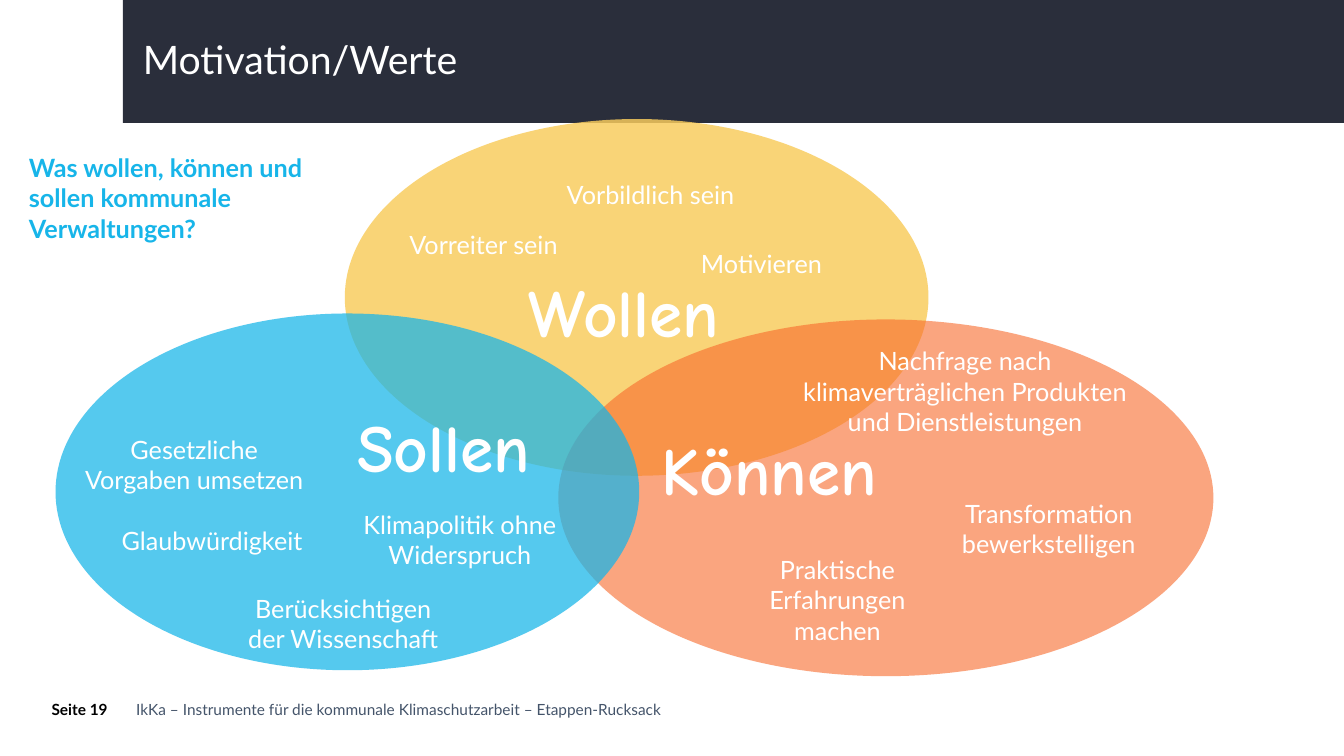
"""Build the slide on what municipal administrations want, can and should do."""
from lxml.etree import SubElement as add_element
from pptx import Presentation
from pptx.dml.color import RGBColor
from pptx.enum.shapes import MSO_SHAPE as Preset
from pptx.enum.text import MSO_ANCHOR as Anchor, PP_ALIGN as Align
from pptx.oxml.ns import qn
from pptx.util import Cm, Pt

COLOURS = {
    "navy": "2A2E3B",
    "yellow": "F9CC5D",
    "orange": "F8692B",
    "blue": "17B5E9",
    "slate": "44546A",
    "white": "FFFFFF",
    "black": "000000",
}


def write_text(box, text, size=18, font="Lato", colour="white", bold=False,
               align=Align.LEFT, inset=(0, 0)):
    """Fill a box with one formatted paragraph."""
    frame = box.text_frame
    frame.word_wrap = True
    frame.vertical_anchor = Anchor.TOP
    frame.margin_left = frame.margin_right = Cm(inset[0])
    frame.margin_top = frame.margin_bottom = Cm(inset[1])
    para = frame.paragraphs[0]
    para.text = text
    para.alignment = align
    for span in para.runs:
        span.font.size = Pt(size)
        span.font.name = font
        span.font.bold = bold
        span.font.color.rgb = RGBColor.from_string(COLOURS[colour])
    return para


def add_filled(preset, place, colour, opacity=100):
    """Add a borderless shape with a plain, possibly translucent fill."""
    shape = page.shapes.add_shape(preset, *map(Cm, place))
    shape.shadow.inherit = False
    shape.line.fill.background()
    shape.fill.solid()
    shape.fill.fore_color.rgb = RGBColor.from_string(COLOURS[colour])
    if opacity < 100:
        tint = shape.fill._xPr.find(qn("a:solidFill"))[0]
        add_element(tint, qn("a:alpha"), val=str(opacity * 1000))


deck = Presentation()
deck.slide_width, deck.slide_height = Cm(33.87), Cm(19.05)
page = deck.slides.add_slide(deck.slide_layouts[5])

add_filled(Preset.RECTANGLE, (3.1, 0, 30.77, 3.1), "navy")

title = page.shapes.title
title.left, title.top, title.width, title.height = map(Cm, (3.35, 0.89, 29.21, 1.55))
heading = write_text(title, "Motivation/Werte", size=28, inset=(0.25, 0.13))
heading.line_spacing = 0.9
page.shapes._spTree.append(title._element)

ellipses = [
    ((8.69, 3, 14.71, 8.99), "yellow", 84),
    ((14.07, 8.05, 16.51, 8.99), "orange", 60),
    ((1.4, 7.9, 14.71, 8.99), "blue", 73),
]
for place, colour, opacity in ellipses:
    add_filled(Preset.OVAL, place, colour, opacity)

circle_names = [
    ("Wollen", 11.28, 6.81),
    ("Können", 14.94, 10.8),
    ("Sollen", 6.73, 10.21),
]
for text, left, top in circle_names:
    box = page.shapes.add_textbox(Cm(left), Cm(top), Cm(8.89), Cm(2.06))
    write_text(box, text, size=48, font="Comic Neue", bold=True, align=Align.CENTER)

labels = [
    ("Vorbildlich sein", 14.07, 4.52, 4.65, 1),
    ("Vorreiter sein", 9.86, 5.79, 4.65, 1),
    ("Motivieren", 16.74, 6.27, 4.9, 1),
    ("Nachfrage nach klimaverträglichen Produkten\nund Dienstleistungen",
     19.71, 8.71, 9.22, 3),
    ("Transformation bewerkstelligen", 23.75, 12.55, 5.36, 2),
    ("Praktische Erfahrungen\nmachen", 18.21, 13.97, 5.79, 3),
    ("Gesetzliche Vorgaben umsetzen", 1.9, 10.95, 5.99, 2),
    ("Glaubwürdigkeit", 3.02, 13.23, 4.65, 1),
    ("Klimapolitik ohne Widerspruch", 8.76, 12.83, 5.66, 2),
    ("Berücksichtigen der Wissenschaft", 6.02, 14.94, 5.26, 2),
]
for text, left, top, width, lines in labels:
    box = page.shapes.add_textbox(Cm(left), Cm(top), Cm(width), Cm(0.77 * lines))
    write_text(box, text, align=Align.CENTER)

question = page.shapes.add_textbox(Cm(0.48), Cm(3.71), Cm(16.92), Cm(2.57))
write_text(question, "Was wollen, können und\nsollen kommunale\nVerwaltungen?",
           colour="blue", bold=True, inset=(0.25, 0.13))

page_number = page.shapes.add_textbox(Cm(1.3), Cm(17.65), Cm(1.85), Cm(0.61))
write_text(page_number, "Seite 19", size=11, colour="black", bold=True)

footer = page.shapes.add_textbox(Cm(3.43), Cm(17.65), Cm(14.15), Cm(0.48))
write_text(footer, "IkKa – Instrumente für die kommunale Klimaschutzarbeit – Etappen-Rucksack",
           size=11, colour="slate")

deck.save("out.pptx")
